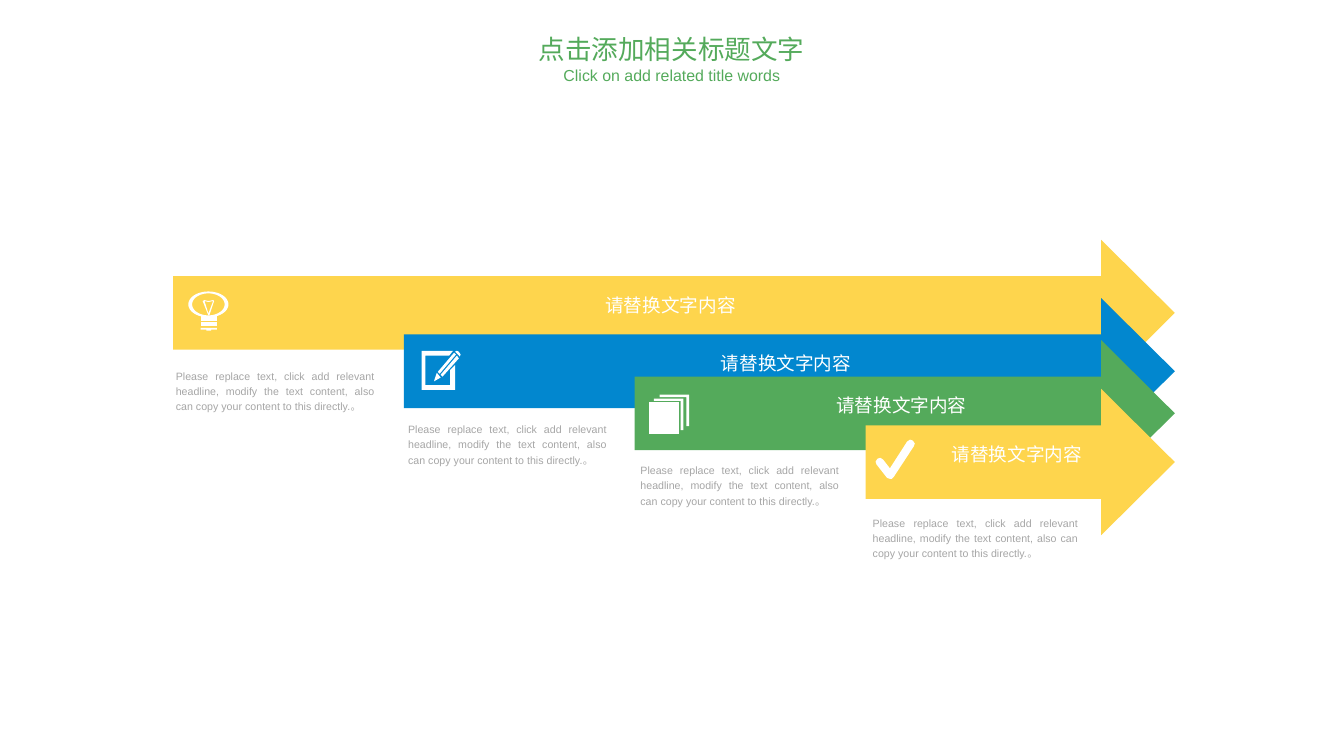
"""Build a slide of four stepped arrows, each with an icon and a note."""
from dataclasses import dataclass
from math import cos, pi, sin
from typing import Any

from lxml.etree import SubElement
from pptx import Presentation
from pptx.dml.color import RGBColor
from pptx.enum.text import MSO_ANCHOR as Anchor, MSO_AUTO_SIZE as Size, PP_ALIGN as Align
from pptx.oxml.ns import qn
from pptx.util import Inches, Pt

CELL = Inches(0.01)
COLS, ROWS = 1406, 791
YELLOW = RGBColor(0xFE, 0xD5, 0x4D)
BLUE = RGBColor(0x02, 0x87, 0xCF)
GREEN = RGBColor(0x54, 0xAA, 0x5B)
GRAY = RGBColor(0xA6, 0xA6, 0xA6)
WHITE = RGBColor(0xFF, 0xFF, 0xFF)
LATIN, HAN = "Arial", "Noto Sans CJK SC"
LABEL = "请替换文字内容"
NOTE = ("Please replace text, click add relevant headline, modify the text content, "
        "also can copy your content to this directly.。")
TIP, HEAD, WING, TALL = 1229, 77, 38, 153
LEFT, STEP = 181, 241.5
NOTE_LEFT, NOTE_STEP = 173, 243

Ring = list[tuple[float, float]]
Icon = list[list[Ring]]


@dataclass
class Style:
    """Format of one text."""
    size: int
    color: RGBColor
    font: str = LATIN
    align: Any = Align.CENTER
    space: float = 1.2
    after: int = 0
    pad: tuple[int, int, int, int] = (11, 5, 11, 5)
    anchor: Any = Anchor.TOP
    wrap: bool = True


@dataclass
class Arrow:
    """One arrow with its icon and note."""
    top: int
    color: RGBColor
    icon: Icon
    spot: tuple[int, int]
    note: int
    wide: int = 230


def put(item: Any, vals: dict[str, Any]) -> None:
    """Set each named value on the item."""
    for name, val in vals.items():
        setattr(item, name, val)


def place(shape: Any, left: float, top: float, wide: float, tall: float) -> None:
    """Move and size a shape in grid cells."""
    names = ("left", "top", "width", "height")
    put(shape, {n: round(v * CELL) for n, v in zip(names, (left, top, wide, tall))})


def write(shape: Any, text: str, style: Style) -> None:
    """Write one formatted paragraph into a shape."""
    frame = shape.text_frame
    sides = ("margin_left", "margin_top", "margin_right", "margin_bottom")
    put(frame, {n: v * CELL for n, v in zip(sides, style.pad)})
    put(frame, {"auto_size": Size.NONE, "word_wrap": style.wrap,
                "vertical_anchor": style.anchor})
    para = frame.paragraphs[0]
    put(para, {"alignment": style.align, "line_spacing": style.space,
               "space_before": Pt(0), "space_after": Pt(style.after)})
    run = para.add_run()
    run.text = text
    put(run.font, {"size": Pt(style.size), "name": style.font})
    run.font.color.rgb = style.color
    SubElement(run.font._element, qn("a:ea"), typeface=style.font)


def outline(shapes: Any, rings: list[Ring], color: RGBColor, x: float = 0, y: float = 0) -> Any:
    """Draw closed rings as one filled freeform."""
    build = None
    for ring in rings:
        pts = [(round((x + a) * CELL), round((y + b) * CELL)) for a, b in ring]
        if build is None:
            build = shapes.build_freeform(*pts[0], scale=1.0)
        else:
            build.move_to(*pts[0])
        build.add_line_segments(pts[1:], close=True)
    shape = build.convert_to_shape()
    shape.shadow.inherit = False
    shape.fill.solid()
    shape.fill.fore_color.rgb = color
    shape.line.fill.background()
    return shape


def oval(x: float, y: float, wide: float, tall: float, turn: int = 1) -> Ring:
    """Give the points of an oval."""
    steps = [turn * pi * i / 24 for i in range(48)]
    return [(x + wide * cos(t), y + tall * sin(t)) for t in steps]


def box(x: float, y: float, wide: float, tall: float) -> Ring:
    """Give the corners of a box."""
    return [(x, y), (x + wide, y), (x + wide, y + tall), (x, y + tall)]


def edge(x: float, y: float) -> Ring:
    """Give the visible edge of a sheet lying behind."""
    pts = [(0, 0), (31, 0), (31, 33), (28, 33), (28, 2.5), (0, 2.5)]
    return [(x + a, y + b) for a, b in pts]


BULB: Icon = [
    [oval(21, 13.5, 21, 13.5), oval(21, 13.5, 17, 11.5, -1)],
    [box(13, 26, 17, 5)],
    [box(13, 32, 17, 4)],
    [[(13, 38), (30, 38), (30, 40), (24, 40), (24, 41), (19, 41), (19, 40), (13, 40)]],
    [[(15, 10), (17, 9), (21, 10), (26, 9), (27, 10), (22, 25), (21, 25)],
     [(21, 23), (26, 10), (21, 11), (17, 10)]],
]
PEN: Icon = [
    [[(20, 29), (16, 24), (13, 33)]],
    [[(34, 3), (17, 23), (19, 25), (36, 5)]],
    [[(20, 26), (22, 28), (39, 9), (37, 6)]],
    [[(35, 2), (37, 1), (39, 2), (41, 5), (40, 7)]],
    [[(30, 37), (4, 37), (4, 6), (29, 6), (33, 1), (0, 1), (0, 42), (35, 42),
      (35, 16), (30, 21)]],
]
SHEETS: Icon = [[edge(5, 4)], [edge(11, 0)], [box(0, 8, 31, 33)]]
CHECK: Icon = [[[
    (15, 41), (12, 40), (1, 26), (0, 23), (2, 20), (5, 19), (8, 21), (15, 30),
    (33, 2), (36, 0), (39, 1), (41, 4), (40, 7), (19, 39), (17, 41)]]]
ARROWS = [
    Arrow(251, YELLOW, BULB, (197, 305), 379),
    Arrow(312, BLUE, PEN, (441, 366), 435),
    Arrow(356, GREEN, SHEETS, (679, 413), 478),
    Arrow(407, YELLOW, CHECK, (916, 460), 533, 237),
]


def draw(shapes: Any, i: int, item: Arrow) -> None:
    """Draw one arrow with its note and icon."""
    note = shapes.add_textbox(0, 0, 0, 0)
    place(note, NOTE_LEFT + NOTE_STEP * i, item.note, item.wide, 58)
    write(note, NOTE, Style(8, GRAY, align=Align.JUSTIFY))
    left, neck, top, end = LEFT + STEP * i, TIP - HEAD, item.top, item.top + TALL
    ring = [(left, top + WING), (neck, top + WING), (neck, top), (TIP, top + TALL / 2),
            (neck, end), (neck, end - WING), (left, end - WING)]
    arrow = outline(shapes, [ring], item.color)
    write(arrow, LABEL, Style(14, WHITE, pad=(59, 41, 66, 62), anchor=Anchor.MIDDLE))
    group = shapes.add_group_shape()
    for rings in item.icon:
        outline(group.shapes, rings, WHITE, *item.spot)


def main() -> None:
    """Build and save the slide."""
    deck = Presentation()
    put(deck, {"slide_width": COLS * CELL, "slide_height": ROWS * CELL})
    shapes = deck.slides.add_slide(deck.slide_layouts[5]).shapes
    for i, item in enumerate(ARROWS):
        draw(shapes, i, item)
    place(shapes.title, 535, 29, 335, 41)
    write(shapes.title, "点击添加相关标题文字",
          Style(20, GREEN, HAN, space=1.0, after=6, wrap=False))
    sub = shapes.add_textbox(0, 0, 0, 0)
    place(sub, 576, 64, 254, 41)
    write(sub, "Click on add related title words",
          Style(12, GREEN, space=1.0, after=6, wrap=False))
    deck.save("out.pptx")


if __name__ == "__main__":
    main()
